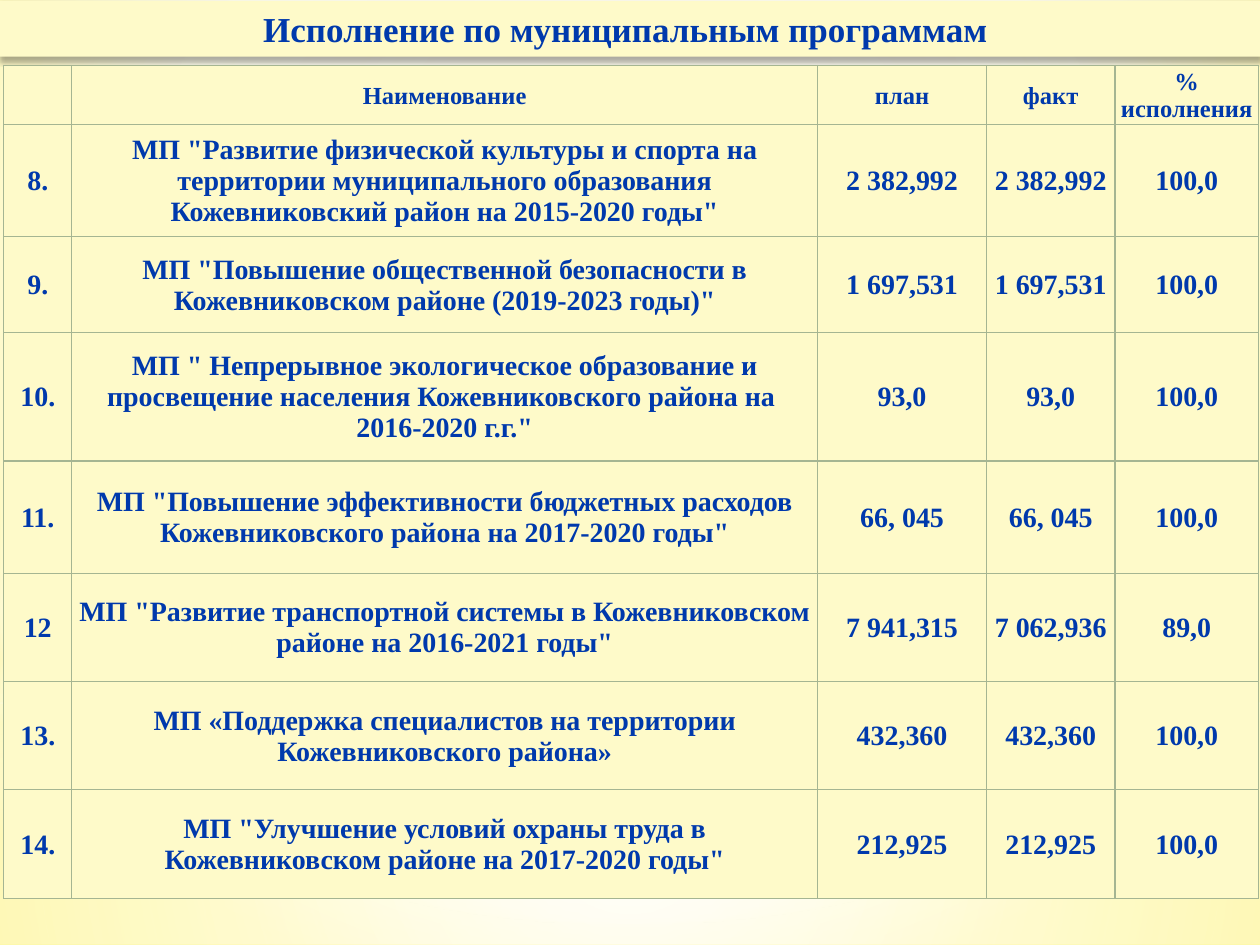
from pptx import Presentation
from pptx.dml.color import RGBColor
from pptx.enum import shapes, text
from pptx.oxml import parse_xml
from pptx.oxml.ns import nsdecls, qn
from pptx.util import Inches, Pt

BLUE = RGBColor(0x00, 0x39, 0xAC)
CREAM = RGBColor(0xFE, 0xFA, 0xC9)
SAGE = RGBColor(0xA5, 0xB5, 0x92)
WHITE = RGBColor(0xFF, 0xFF, 0xFF)
LEMON = RGBColor(0xFF, 0xF9, 0xB5)
YELLOW = RGBColor(0xFF, 0xF4, 0x6F)
FONT = "Times New Roman"

TITLE = "Исполнение по муниципальным программам "
COLUMN_WIDTHS = [0.54, 5.92, 1.34, 1.02, 1.14]
ROW_HEIGHTS = [0.47, 0.89, 0.76, 1.02, 0.89, 0.86, 0.86, 0.86]
ROWS = [
    ("", "Наименование", "план", "факт", "% исполнения"),
    ("8.", 'МП "Развитие физической культуры и спорта на территории муниципального '
     'образования Кожевниковский район на 2015-2020 годы"', "2 382,992", "2 382,992", "100,0"),
    ("9.", 'МП "Повышение общественной безопасности в Кожевниковском районе '
     '(2019-2023 годы)"', "1 697,531", "1 697,531", "100,0"),
    ("10.", 'МП " Непрерывное экологическое образование и просвещение населения '
     'Кожевниковского района на \n2016-2020 г.г."', "93,0", "93,0", "100,0"),
    ("11.", 'МП "Повышение эффективности бюджетных расходов Кожевниковского района '
     'на 2017-2020 годы"', "66, 045", "66, 045", "100,0"),
    ("12", 'МП "Развитие транспортной системы в Кожевниковском районе на '
     '2016-2021 годы"', "7 941,315", "7 062,936", "89,0"),
    ("13.", "МП «Поддержка специалистов на территории Кожевниковского района»",
     "432,360", "432,360", "100,0"),
    ("14.", 'МП "Улучшение условий охраны труда в Кожевниковском районе на '
     '2017-2020 годы"', "212,925", "212,925", "100,0"),
]


def set_gradient(parent, stops, focus=None):
    """Replace a solid fill by a circular gradient, or a downward one without focus.

    Stops are (position, colour, opacity); focus is left, top, right, bottom. All in percent.
    """
    stop_xml = "".join(
        f'<a:gs pos="{position * 1000}"><a:srgbClr val="{colour}">'
        f'<a:alpha val="{opacity * 1000}"/></a:srgbClr></a:gs>'
        for position, colour, opacity in stops)
    if focus:
        sides = " ".join(f'{side}="{value * 1000}"' for side, value in zip("ltrb", focus))
        direction = f'<a:path path="circle"><a:fillToRect {sides}/></a:path>'
    else:
        direction = '<a:lin ang="5400000" scaled="0"/>'
    gradient = parse_xml(f'<a:gradFill {nsdecls("a")} rotWithShape="1">'
                         f'<a:gsLst>{stop_xml}</a:gsLst>{direction}</a:gradFill>')
    parent.replace(parent.find(qn("a:solidFill")), gradient)


def set_background(slide):
    slide.background.fill.solid()
    set_gradient(slide.background._cSld.find(".//" + qn("p:bgPr")),
                 [(0, LEMON, 100), (60, WHITE, 100), (100, YELLOW, 100)], (20, 10, 20, 60))


def add_glow(slide, kind, top, height, stops, focus=None):
    """Add a full-width translucent shape that lightens the background."""
    glow = slide.shapes.add_shape(kind, 0, Inches(top), Inches(10), Inches(height))
    glow.shadow.inherit = False
    glow.line.fill.background()
    glow.fill.solid()
    set_gradient(glow._element.spPr, stops, focus)


def format_text(frame, size):
    frame.word_wrap = True
    for paragraph in frame.paragraphs:
        paragraph.alignment = text.PP_ALIGN.CENTER
        font = paragraph.font
        font.name, font.size, font.bold = FONT, Pt(size), True
        font.color.rgb = BLUE


def place_title(slide):
    title = slide.shapes.title
    title.left, title.top, title.width, title.height = map(Inches, (0, 0.01, 10, 0.44))
    title.fill.solid()
    title.fill.fore_color.rgb = CREAM
    frame = title.text_frame
    frame.text = TITLE
    frame.auto_size = text.MSO_AUTO_SIZE.NONE
    frame.vertical_anchor = text.MSO_ANCHOR.MIDDLE
    format_text(frame, 20)
    title._element.spPr.append(parse_xml(
        f'<a:effectLst {nsdecls("a")}><a:outerShdw blurRad="{Pt(3.5)}" dist="{Pt(2.2)}" '
        'dir="5400000" rotWithShape="0"><a:srgbClr val="000000"><a:alpha val="32000"/>'
        '</a:srgbClr></a:outerShdw></a:effectLst>'))
    slide.shapes._spTree.append(title._element)  # in front of the glows


def set_borders(cell):
    properties = cell._tc.get_or_add_tcPr()
    for index, side in enumerate("LRTB"):
        properties.insert(index, parse_xml(
            f'<a:ln{side} {nsdecls("a")} w="{Pt(0.75)}"><a:solidFill>'
            f'<a:srgbClr val="{SAGE}"/></a:solidFill></a:ln{side}>'))


def fill_cell(cell, words, size):
    cell.text = words
    cell.vertical_anchor = text.MSO_ANCHOR.MIDDLE
    cell.margin_left = cell.margin_right = cell.margin_top = Inches(0.01)
    cell.margin_bottom = 0
    cell.fill.solid()
    cell.fill.fore_color.rgb = CREAM
    format_text(cell.text_frame, size)
    set_borders(cell)


def add_programme_table(slide):
    table = slide.shapes.add_table(
        len(ROWS), len(COLUMN_WIDTHS), Inches(0.03), Inches(0.52),
        Inches(sum(COLUMN_WIDTHS)), Inches(sum(ROW_HEIGHTS))).table
    table.first_row = table.horz_banding = False
    for column, width in zip(table.columns, COLUMN_WIDTHS):
        column.width = Inches(width)
    for index, (row, height, values) in enumerate(zip(table.rows, ROW_HEIGHTS, ROWS)):
        row.height = Inches(height)
        for cell, words in zip(row.cells, values):
            fill_cell(cell, words, 16 if index else 14)


def main():
    deck = Presentation()
    deck.slide_width, deck.slide_height = Inches(10), Inches(7.5)
    slide = deck.slides.add_slide(deck.slide_layouts[5])
    set_background(slide)
    rectangle, oval = shapes.MSO_SHAPE.RECTANGLE, shapes.MSO_SHAPE.OVAL
    centre = (50, 50, 50, 50)
    add_glow(slide, rectangle, 5.58, 1.92,
             [(0, WHITE, 91), (37, WHITE, 76), (100, CREAM, 79)], centre)
    add_glow(slide, rectangle, 0, 5.58,
             [(0, WHITE, 89), (48, WHITE, 62), (100, CREAM, 79)], centre)
    add_glow(slide, rectangle, 4.12, 2.5,
             [(0, WHITE, 0), (29, WHITE, 30), (45, CREAM, 40),
              (55, WHITE, 26), (65, CREAM, 60), (100, WHITE, 0)])
    add_glow(slide, oval, 1.75, 5.58, [(0, WHITE, 100), (56, WHITE, 0)], centre)
    place_title(slide)
    add_programme_table(slide)
    deck.save("out.pptx")


if __name__ == "__main__":
    main()
